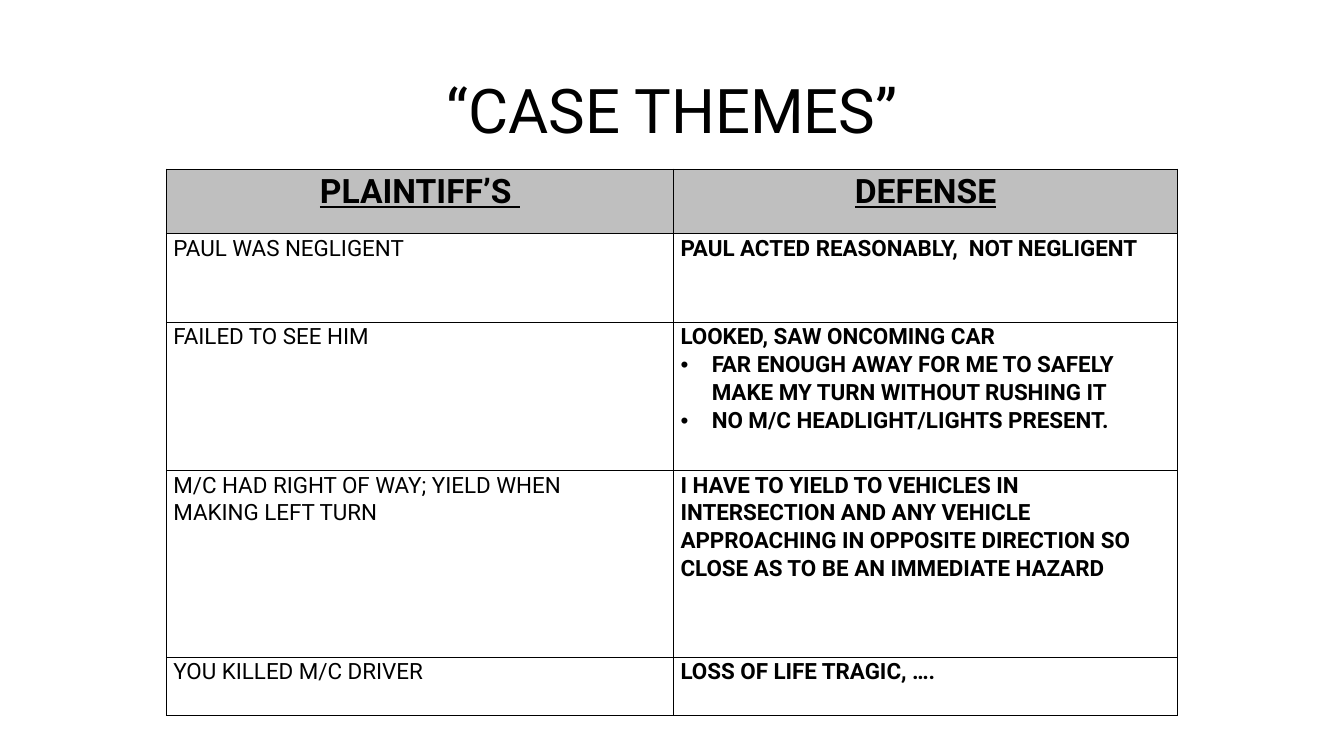
from dataclasses import dataclass

from lxml.etree import SubElement
from pptx import Presentation
from pptx.dml.color import RGBColor
from pptx.enum.text import MSO_ANCHOR, PP_ALIGN
from pptx.oxml.ns import qn
from pptx.util import Inches, Pt


@dataclass(frozen=True)
class Theme:
    font: str = "Roboto"
    ink: str = "000000"
    header_fill: str = "BFBFBF"
    title_size: int = 44
    header_size: int = 24
    body_size: int = 16
    border_width: int = 1


THEME = Theme()
BULLET = "• "
HEADERS = ["PLAINTIFF’S ", "DEFENSE"]
ARGUMENTS = [
    (["PAUL WAS NEGLIGENT"], ["PAUL ACTED REASONABLY,  NOT NEGLIGENT"]),
    (
        ["FAILED TO SEE HIM"],
        [
            "LOOKED, SAW ONCOMING CAR",
            BULLET + "FAR ENOUGH AWAY FOR ME TO SAFELY MAKE MY TURN WITHOUT RUSHING IT",
            BULLET + "NO M/C HEADLIGHT/LIGHTS PRESENT.",
        ],
    ),
    (
        ["M/C HAD RIGHT OF WAY; YIELD WHEN", "MAKING LEFT TURN"],
        [
            "I HAVE TO YIELD TO VEHICLES IN INTERSECTION AND ANY VEHICLE "
            "APPROACHING IN OPPOSITE DIRECTION SO CLOSE AS TO BE AN IMMEDIATE HAZARD"
        ],
    ),
    (["YOU KILLED M/C DRIVER"], ["LOSS OF LIFE TRAGIC, …."]),
]
COLUMN_WIDTHS = [5.03, 5]
ROW_HEIGHTS = [0.64, 0.88, 1.47, 1.85, 0.58]


def write_paragraph(para, text, size, line_spacing, align=PP_ALIGN.LEFT, **font_format):
    """Fill a paragraph; text that starts with BULLET gets a hanging bullet."""
    if text.startswith(BULLET):
        properties = para._p.get_or_add_pPr()
        properties.set("marL", str(Inches(0.31)))
        properties.set("indent", str(-Inches(0.31)))
        SubElement(properties, qn("a:buFont"), typeface="Arial")
        SubElement(properties, qn("a:buChar"), char=BULLET.strip())
    para.alignment = align
    para.line_spacing = line_spacing
    span = para.add_run()
    span.text = text.removeprefix(BULLET)
    span.font.color.rgb = RGBColor.from_string(THEME.ink)
    for name, value in {"name": THEME.font, "size": Pt(size), **font_format}.items():
        setattr(span.font, name, value)


def add_borders(cell):
    properties = cell._tc.get_or_add_tcPr()
    for side in ("lnL", "lnR", "lnT", "lnB"):
        line = SubElement(properties, qn(f"a:{side}"), w=str(Pt(THEME.border_width)))
        SubElement(SubElement(line, qn("a:solidFill")), qn("a:srgbClr"), val=THEME.ink)


deck = Presentation()
deck.slide_width, deck.slide_height = Inches(13.33), Inches(7.5)
slide = deck.slides.add_slide(deck.slide_layouts[5])

title = slide.shapes.title
title.left, title.top = Inches(0.92), Inches(0.4)
title.width, title.height = Inches(11.5), Inches(1.45)
title.text_frame.vertical_anchor = MSO_ANCHOR.MIDDLE
write_paragraph(
    title.text_frame.paragraphs[0], "“CASE THEMES”", THEME.title_size, 0.9, PP_ALIGN.CENTER
)

table = slide.shapes.add_table(
    len(ROW_HEIGHTS), len(COLUMN_WIDTHS),
    Inches(1.65), Inches(1.68), Inches(sum(COLUMN_WIDTHS)), Inches(sum(ROW_HEIGHTS)),
).table
table.horz_banding = False
for column, width in zip(table.columns, COLUMN_WIDTHS):
    column.width = Inches(width)
for row, height in zip(table.rows, ROW_HEIGHTS):
    row.height = Inches(height)

rows = [[[header] for header in HEADERS], *ARGUMENTS]
for row_index, row_texts in enumerate(rows):
    is_header = row_index == 0
    for column_index, lines in enumerate(row_texts):
        cell = table.cell(row_index, column_index)
        cell.margin_left = cell.margin_right = Inches(0.07)
        cell.margin_top = cell.margin_bottom = 0
        cell.vertical_anchor = MSO_ANCHOR.TOP
        add_borders(cell)
        if is_header:
            cell.fill.solid()
            cell.fill.fore_color.rgb = RGBColor.from_string(THEME.header_fill)
        else:
            cell.fill.background()
        for line_index, text in enumerate(lines):
            frame = cell.text_frame
            para = frame.add_paragraph() if line_index else frame.paragraphs[0]
            write_paragraph(
                para, text,
                THEME.header_size if is_header else THEME.body_size, 1.07,
                PP_ALIGN.CENTER if is_header else PP_ALIGN.LEFT,
                bold=is_header or column_index == 1, underline=is_header,
            )

deck.save("out.pptx")
